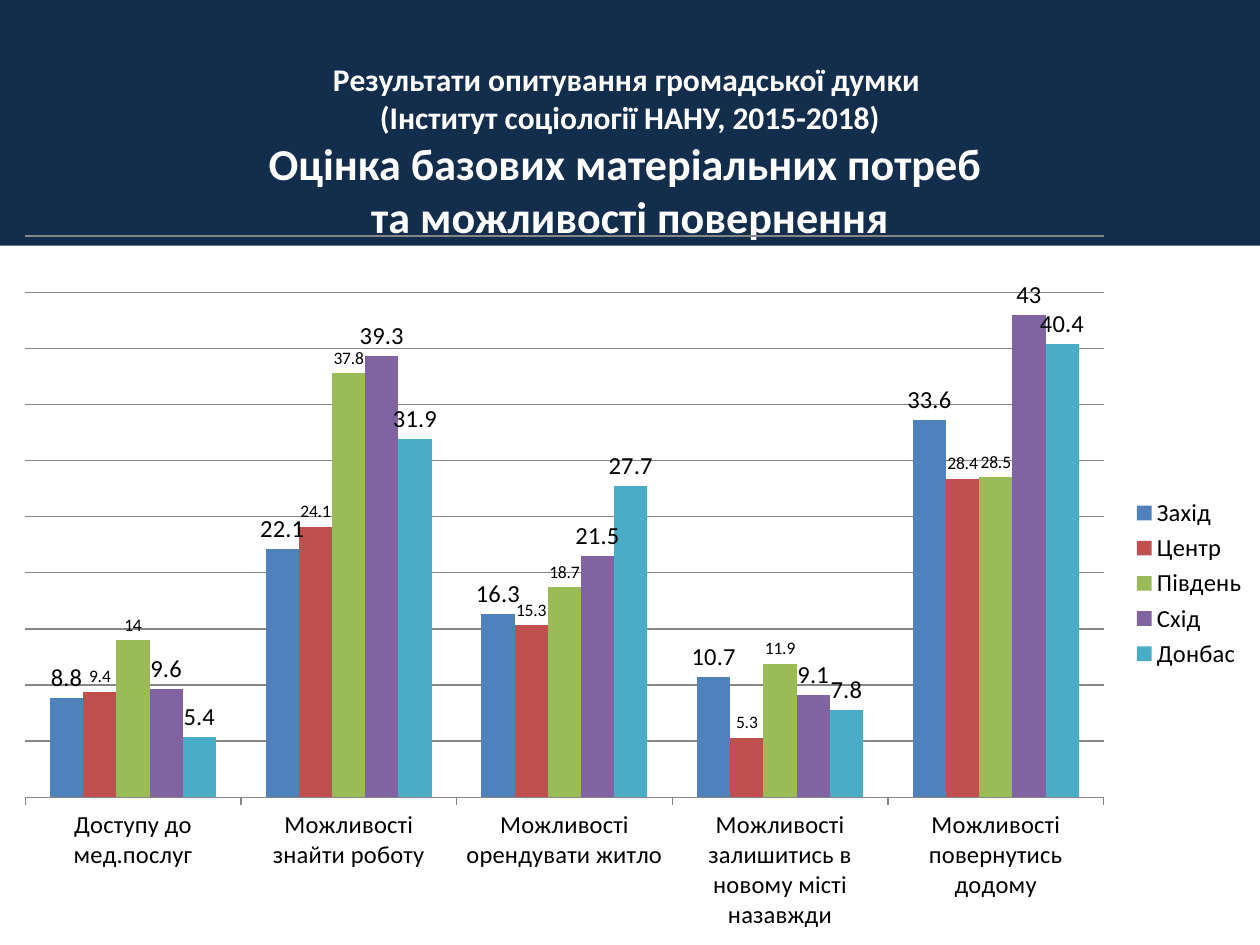
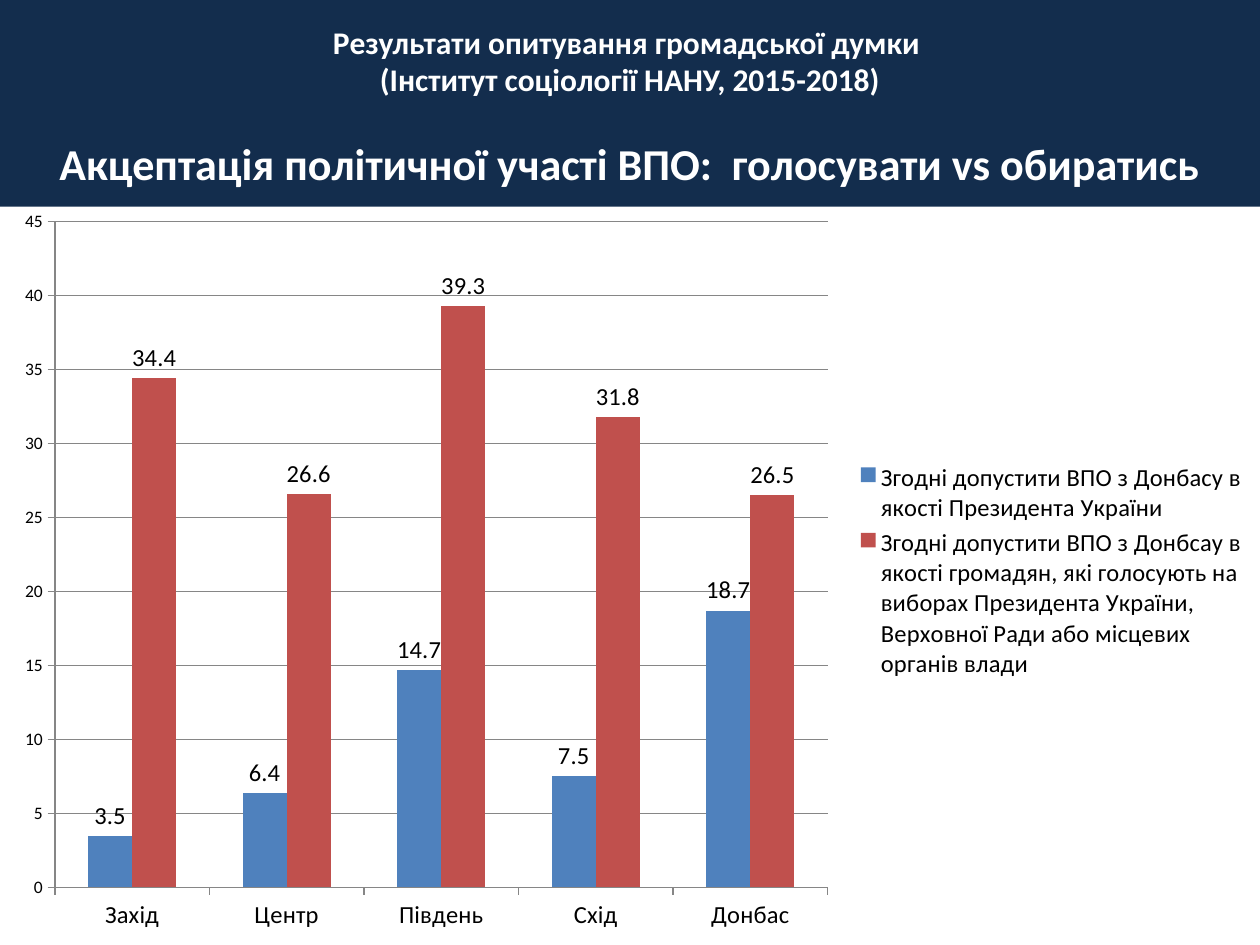
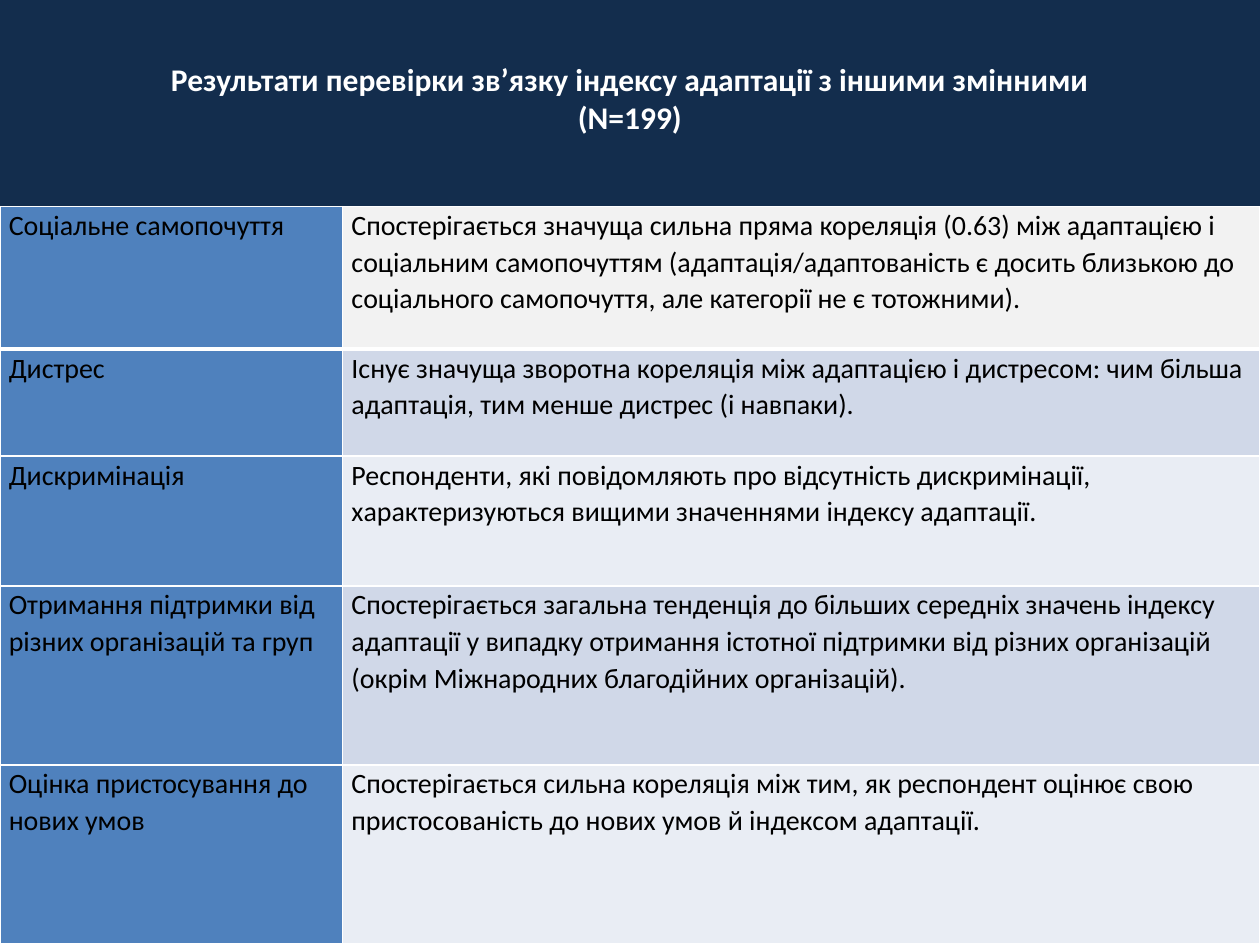
from lxml import etree
from pptx import Presentation
from pptx.chart.data import CategoryChartData
from pptx.dml.color import RGBColor
from pptx.enum.chart import XL_CHART_TYPE, XL_LABEL_POSITION, XL_LEGEND_POSITION, XL_TICK_MARK
from pptx.enum.shapes import MSO_SHAPE
from pptx.enum.text import MSO_ANCHOR, PP_ALIGN
from pptx.oxml.ns import qn
from pptx.util import Inches, Pt

COLUMNS = XL_CHART_TYPE.COLUMN_CLUSTERED
OUTSIDE_END = XL_LABEL_POSITION.OUTSIDE_END
RIGHT = XL_LEGEND_POSITION.RIGHT
TICK_OUT, TICK_NONE = XL_TICK_MARK.OUTSIDE, XL_TICK_MARK.NONE
RECTANGLE = MSO_SHAPE.RECTANGLE
TOP = MSO_ANCHOR.TOP
CENTER = PP_ALIGN.CENTER

FONT = "Calibri"
SLIDE_W, SLIDE_H = 10, 7.5
SMALL, LABEL, BODY, SUBTITLE, TITLE = 10, 14, 16, 18, 25.2
COLORS = {
    "navy": "132D4D", "white": "FFFFFF", "black": "000000", "grid": "868686",
    "blue": "4F81BD", "red": "C0504D", "green": "9BBB59", "purple": "8064A2",
    "teal": "4BACC6", "grey": "F2F2F2", "mist": "D0D8E8", "pale": "E9EDF4",
}

SURVEY = "Pезультати опитування громадської думки \v(Інститут соціології НАНУ, 2015-2018)"
REGIONS = ["Захід", "Центр", "Південь", "Схід", "Донбас"]

NEEDS = [
    "Доступу до мед.послуг",
    "Можливості знайти роботу",
    "Можливості орендувати житло",
    "Можливості залишитись в новому місті назавжди",
    "Можливості повернутись додому",
]
NEEDS_SERIES = [
    (REGIONS[0], [8.8, 22.1, 16.3, 10.7, 33.6], "blue", LABEL),
    (REGIONS[1], [9.4, 24.1, 15.3, 5.3, 28.4], "red", SMALL),
    (REGIONS[2], [14, 37.8, 18.7, 11.9, 28.5], "green", SMALL),
    (REGIONS[3], [9.6, 39.3, 21.5, 9.1, 43], "purple", LABEL),
    (REGIONS[4], [5.4, 31.9, 27.7, 7.8, 40.4], "teal", LABEL),
]
POLITICS_SERIES = [
    ("Згодні допустити ВПО з Донбасу в якості Президента України",
     [3.5, 6.4, 14.7, 7.5, 18.7], "blue", LABEL),
    ("Згодні допустити ВПО з Донбсау в якості громадян, які голосують на виборах "
     "Президента України, Верховної Ради або місцевих органів влади",
     [34.4, 26.6, 39.3, 31.8, 26.5], "red", LABEL),
]
CORRELATIONS = [
    ("Соціальне самопочуття",
     "Спостерігається значуща сильна пряма кореляція (0.63) між адаптацією і соціальним "
     "самопочуттям (адаптація/адаптованість є досить близькою до соціального самопочуття, "
     "але категорії не є тотожними).", "grey", 1.13),
    ("Дистрес",
     "Існує значуща зворотна кореляція між адаптацією і дистресом: чим більша адаптація, "
     "тим менше дистрес (і навпаки).", "mist", 0.85),
    ("Дискримінація",
     "Респонденти, які повідомляють про відсутність дискримінації, характеризуються вищими "
     "значеннями індексу адаптації.", "pale", 1.03),
    ("Отримання підтримки від різних організацій та груп",
     "Спостерігається загальна тенденція до більших середніх значень індексу адаптації у "
     "випадку отримання істотної підтримки від різних організацій (окрім Міжнародних "
     "благодійних організацій).", "mist", 1.42),
    ("Оцінка пристосування до нових умов",
     "Спостерігається сильна кореляція між тим, як респондент оцінює свою пристосованість "
     "до нових умов й індексом адаптації.", "pale", 1.42),
]


def rgb(name):
    return RGBColor.from_string(COLORS[name])


def inches(box):
    return [Inches(v) for v in box]


def set_font(font, size, color="black", bold=False):
    font.name, font.size, font.bold = FONT, Pt(size), bold
    font.color.rgb = rgb(color)


def add_title_band(s, height, text_top, paragraphs):
    sp = s.shapes.add_shape(RECTANGLE, *inches((0, 0, SLIDE_W, height)))
    sp.shadow.inherit = False
    sp.fill.solid()
    sp.fill.fore_color.rgb = rgb("navy")
    sp.line.fill.background()
    tf = sp.text_frame
    tf.word_wrap = True
    tf.vertical_anchor = TOP
    tf.margin_top, tf.margin_bottom = Inches(text_top), 0
    for i, (text, size, gap) in enumerate(paragraphs):
        p = tf.add_paragraph() if i else tf.paragraphs[0]
        p.text = text
        p.alignment = CENTER
        p.space_before = Pt(gap)
        set_font(p.font, size, "white", True)


def add_column_chart(s, top, categories, series, maximum, show_values):
    data = CategoryChartData()
    data.categories = categories
    for name, values, _, _ in series:
        data.add_series(name, values)
    box = inches((0, top, SLIDE_W, SLIDE_H - top))
    chart = s.shapes.add_chart(COLUMNS, *box, data).chart
    set_font(chart.font, SMALL)
    chart.has_title = False
    chart.has_legend = True
    chart.legend.position = RIGHT
    chart.legend.include_in_layout = False
    set_font(chart.legend.font, LABEL)

    plot = chart.plots[0]
    plot.gap_width = 150
    plot.vary_by_categories = False
    for ser, (_, _, color, size) in zip(plot.series, series):
        ser.format.fill.solid()
        ser.format.fill.fore_color.rgb = rgb(color)
        labels = ser.data_labels
        labels.show_value = True
        labels.position = OUTSIDE_END
        set_font(labels.font, size)

    value_axis, category_axis = chart.value_axis, chart.category_axis
    value_axis.minimum_scale, value_axis.maximum_scale = 0, maximum
    value_axis.major_unit = 5
    value_axis.has_major_gridlines = True
    value_axis.visible = show_values
    set_font(category_axis.tick_labels.font, LABEL)
    for axis in (value_axis, category_axis):
        axis.major_tick_mark, axis.minor_tick_mark = TICK_OUT, TICK_NONE
    for part in (value_axis, category_axis, value_axis.major_gridlines):
        part.format.line.color.rgb = rgb("grid")
        part.format.line.width = Pt(0.75)


def set_borders(cell, **widths):
    tc_pr = cell._tc.get_or_add_tcPr()
    for side, width in widths.items():
        ln = etree.SubElement(tc_pr, qn(f"a:ln{side}"), w=str(Pt(width)))
        fill = etree.SubElement(ln, qn("a:solidFill"))
        etree.SubElement(fill, qn("a:srgbClr"), val=COLORS["white"])


def fill_cell(cell, text, color, top_line, bottom_line):
    set_borders(cell, L=1, R=1, T=top_line, B=bottom_line)
    cell.fill.solid()
    cell.fill.fore_color.rgb = rgb(color)
    cell.margin_left = cell.margin_right = Inches(0.07)
    cell.margin_top = cell.margin_bottom = 0
    p = cell.text_frame.paragraphs[0]
    p.text = text
    p.line_spacing = 1.07
    set_font(p.font, BODY)


def add_correlation_table(s, top, rows):
    box = inches((0, top, SLIDE_W, SLIDE_H - top))
    table = s.shapes.add_table(len(rows), 2, *box).table
    table.first_row = table.horz_banding = False
    for column, width in zip(table.columns, (2.72, 7.28)):
        column.width = Inches(width)
    for i, (variable, finding, color, height) in enumerate(rows):
        table.rows[i].height = Inches(height)
        lines = (3 if i == 1 else 1, 3 if i == 0 else 1)
        fill_cell(table.cell(i, 0), variable, "blue", *lines)
        fill_cell(table.cell(i, 1), finding, color, *lines)


def main():
    prs = Presentation()
    prs.slide_width, prs.slide_height = Inches(SLIDE_W), Inches(SLIDE_H)
    needs, politics, correlations = [
        prs.slides.add_slide(prs.slide_layouts[6]) for _ in range(3)]

    add_title_band(needs, 1.95, 0.48, [
        (SURVEY, SUBTITLE, 0),
        ("Оцінка базових матеріальних потреб \vта можливості повернення", TITLE, 0)])
    add_column_chart(needs, 1.76, NEEDS, NEEDS_SERIES, 50, False)

    add_title_band(politics, 1.64, 0.18, [
        (SURVEY, SUBTITLE, 0),
        ("Акцептація політичної участі ВПО:  голосувати vs обиратись", TITLE, 22)])
    add_column_chart(politics, 1.56, REGIONS, POLITICS_SERIES, 45, True)

    add_title_band(correlations, 1.64, 0.48, [
        ("Результати перевірки зв’язку індексу адаптації з іншими змінними\v(N=199)",
         SUBTITLE, 0)])
    add_correlation_table(correlations, 1.64, CORRELATIONS)

    prs.save("out.pptx")


if __name__ == "__main__":
    main()
